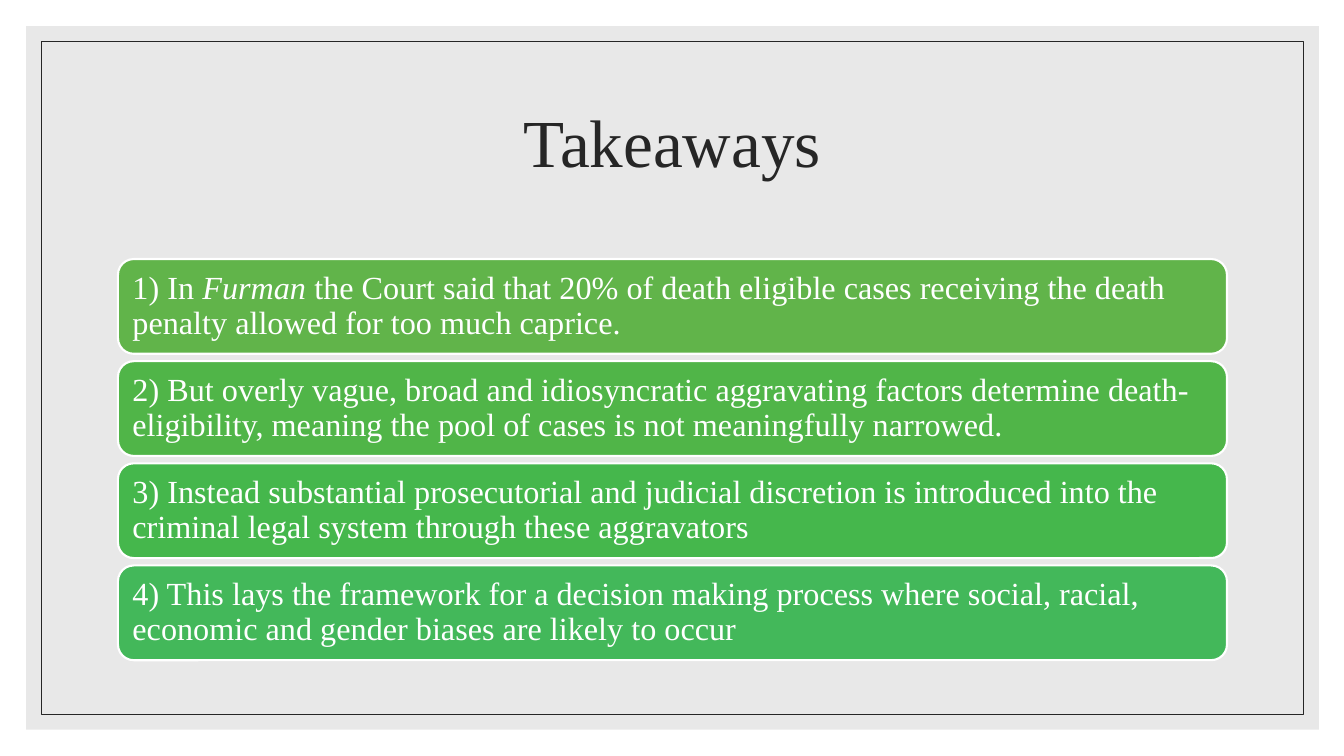
from pptx import Presentation, util as u
from pptx.dml.color import RGBColor
from pptx.enum import shapes, text

PX = 9144
FONT = "Times New Roman"
TAKEAWAYS = [
    ("61B44A", [("1) In ", False), ("Furman ", True),
                ("the Court said that 20% of death eligible cases receiving the death "
                 "penalty allowed for too much caprice.", False)]),
    ("50B548", [("2) But overly vague, broad and idiosyncratic aggravating factors determine "
                 "death-eligibility, meaning the pool of cases is not meaningfully narrowed.", False)]),
    ("45B74C", [("3) Instead substantial prosecutorial and judicial discretion is introduced "
                 "into the criminal legal system through these aggravators", False)]),
    ("43B85A", [("4) This lays the framework for a decision making process where social, "
                 "racial, economic and gender biases are likely to occur", False)]),
]


def px(n):
    """Turn a length in px into EMU."""
    return u.Emu(round(n * PX))


def rgb(hex_code):
    """Turn a hex string into a colour."""
    return RGBColor.from_string(hex_code)


def add_box(slide, kind, box, fill=None, line=None, weight=1):
    """Add a flat preset shape with an optional fill and outline."""
    sp = slide.shapes.add_shape(kind, *map(px, box))
    sp.shadow.inherit = False
    if fill:
        sp.fill.solid()
        sp.fill.fore_color.rgb = rgb(fill)
    else:
        sp.fill.background()
    if line:
        sp.line.color.rgb = rgb(line)
        sp.line.width = u.Pt(weight)
    else:
        sp.line.fill.background()
    return sp


def style_paragraph(p, size, colour, align):
    """Set the font, alignment and line spacing of a paragraph."""
    p.font.name = FONT
    p.font.size = u.Pt(size)
    p.font.color.rgb = rgb(colour)
    p.alignment = align
    p.line_spacing = 0.9


def add_backdrop(slide, box):
    """Draw the grey panel with a thin frame inside it."""
    x, y, w, h = box
    inset = 15
    add_box(slide, shapes.MSO_SHAPE.RECTANGLE, box, fill="E8E8E8")
    frame = (x + inset, y + inset, w - 2 * inset, h - 2 * inset)
    add_box(slide, shapes.MSO_SHAPE.RECTANGLE, frame, line="262626", weight=0.5)


def set_title(slide, box, words):
    """Place the title placeholder in front of the backdrop and format it."""
    title = slide.shapes.title
    title.element.getparent().append(title.element)
    title.left, title.top, title.width, title.height = map(px, box)
    tf = title.text_frame
    tf.text = words
    tf.auto_size = text.MSO_AUTO_SIZE.NONE
    tf.vertical_anchor = text.MSO_ANCHOR.MIDDLE
    style_paragraph(tf.paragraphs[0], 48, "262626", text.PP_ALIGN.CENTER)


def add_card(slide, box, fill, parts):
    """Add one rounded card holding a takeaway."""
    sp = add_box(slide, shapes.MSO_SHAPE.ROUNDED_RECTANGLE, box, fill, "FFFFFF", 1.5)
    tf = sp.text_frame
    tf.word_wrap = True
    tf.vertical_anchor = text.MSO_ANCHOR.MIDDLE
    tf.margin_left = tf.margin_right = tf.margin_top = tf.margin_bottom = px(10)
    p = tf.paragraphs[0]
    style_paragraph(p, 23, "FFFFFF", text.PP_ALIGN.LEFT)
    for words, italic in parts:
        r = p.add_run()
        r.text = words
        if italic:
            r.font.italic = True


def add_cards(slide, box, takeaways):
    """Stack the cards evenly from the top to the bottom of the box."""
    x, y, w, h = box
    card_h = 94
    pitch = (h - card_h) / (len(takeaways) - 1)
    for i, (fill, parts) in enumerate(takeaways):
        add_card(slide, (x, y + i * pitch, w, card_h), fill, parts)


def main():
    """Build and save the slide."""
    prs = Presentation()
    prs.slide_width, prs.slide_height = px(1333), px(750)
    slide = prs.slides.add_slide(prs.slide_layouts[5])
    add_backdrop(slide, (26, 26, 1282, 698))
    set_title(slide, (117, 70, 1100, 150), "Takeaways")
    add_cards(slide, (117, 257, 1100, 398), TAKEAWAYS)
    prs.save("out.pptx")


if __name__ == "__main__":
    main()
